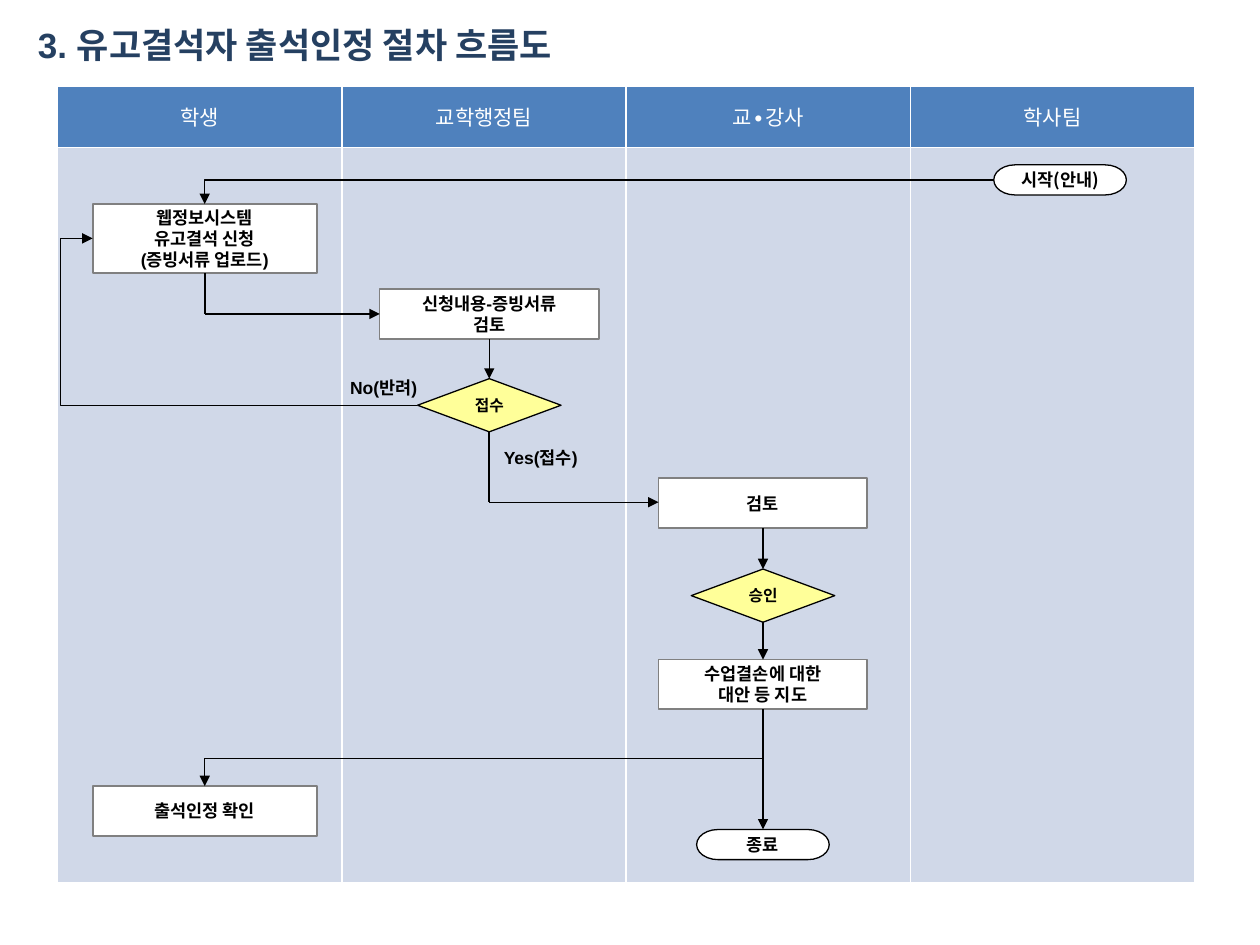
from dataclasses import dataclass

from lxml import etree
from pptx import Presentation
from pptx import util as u
from pptx.dml.color import RGBColor
from pptx.enum import shapes, text
from pptx.oxml.ns import qn

Pt = u.Pt
SHAPE = shapes.MSO_SHAPE
LINK = shapes.MSO_CONNECTOR
CENTER, LEFT = text.PP_ALIGN.CENTER, text.PP_ALIGN.LEFT


@dataclass(frozen=True)
class Theme:
    latin: str = "Arial"
    korean: str = "Noto Sans CJK KR"
    title: str = "254061"
    header: str = "4F81BD"
    lane: str = "D0D8E8"
    decision: str = "FFFF99"
    white: str = "FFFFFF"
    black: str = "000000"
    gray: str = "808080"
    title_size: float = 20
    header_size: float = 12
    body_size: float = 10
    small_size: float = 9


def rgb(value):
    return RGBColor.from_string(value)


class FlowSlide:
    def __init__(self, prs, theme):
        self.t = theme
        self.s = prs.slides.add_slide(prs.slide_layouts[5])

    def set_text(self, tf, lines, size, color=None, font=None, bold=True, align=CENTER):
        for i, line in enumerate(lines.split("\n")):
            p = tf.paragraphs[0] if i == 0 else tf.add_paragraph()
            p.text, p.alignment = line, align
            p.font.name, p.font.size, p.font.bold = font or self.t.latin, Pt(size), bold
            p.font.color.rgb = rgb(color or self.t.black)

    def title(self, words, x, y, w, h):
        sp = self.s.shapes.title
        sp.left, sp.top, sp.width, sp.height = Pt(x), Pt(y), Pt(w), Pt(h)
        tf = sp.text_frame
        tf.auto_size = text.MSO_AUTO_SIZE.NONE
        tf.vertical_anchor = text.MSO_ANCHOR.TOP
        self.set_text(tf, words, self.t.title_size, self.t.title, align=LEFT)

    def border(self, cell):
        tcPr = cell._tc.get_or_add_tcPr()
        for i, side in enumerate(("lnL", "lnR", "lnT", "lnB")):
            ln = etree.Element(qn(f"a:{side}"), w=str(Pt(1)))
            fill = etree.SubElement(ln, qn("a:solidFill"))
            etree.SubElement(fill, qn("a:srgbClr"), val=self.t.white)
            tcPr.insert(i, ln)

    def lanes(self, names, x, y, w, heights):
        table = self.s.shapes.add_table(
            2, len(names), Pt(x), Pt(y), Pt(w), Pt(sum(heights))).table
        for row, h in zip(table.rows, heights):
            row.height = Pt(h)
        for col, name in enumerate(names):
            for row, color in enumerate((self.t.header, self.t.lane)):
                cell = table.cell(row, col)
                cell.fill.solid()
                cell.fill.fore_color.rgb = rgb(color)
                self.border(cell)
            head = table.cell(0, col)
            head.vertical_anchor = text.MSO_ANCHOR.MIDDLE
            self.set_text(head.text_frame, name, self.t.header_size, self.t.white,
                          self.t.korean, bold=False)

    def node(self, kind, words, cx, y, w, h, fill, line, weight, size, font=None):
        sp = self.s.shapes.add_shape(kind, Pt(cx - w / 2), Pt(y), Pt(w), Pt(h))
        sp.shadow.inherit = False
        sp.fill.solid()
        sp.fill.fore_color.rgb = rgb(fill)
        sp.line.color.rgb = rgb(line)
        sp.line.width = Pt(weight)
        tf = sp.text_frame
        tf.vertical_anchor = text.MSO_ANCHOR.MIDDLE
        tf.margin_left = tf.margin_right = tf.margin_top = tf.margin_bottom = 0
        self.set_text(tf, words, size, font=font)

    def step(self, words, cx, y, w, h=28.4):
        self.node(SHAPE.RECTANGLE, words, cx, y, w, h, self.t.white, self.t.gray, 1,
                  self.t.body_size)

    def decision(self, words, cx, y):
        self.node(SHAPE.FLOWCHART_DECISION, words, cx, y, 82, 30.4, self.t.decision,
                  self.t.black, 0.75, self.t.small_size)

    def terminator(self, words, cx, y):
        self.node(SHAPE.FLOWCHART_TERMINATOR, words, cx, y, 75.8, 17.2, self.t.white,
                  self.t.black, 0.75, self.t.body_size, self.t.korean)

    def label(self, words, x, y, w):
        tf = self.s.shapes.add_textbox(Pt(x), Pt(y), Pt(w), Pt(19.4)).text_frame
        tf.word_wrap = True
        self.set_text(tf, words, self.t.body_size, align=LEFT)

    def link(self, x1, y1, x2, y2, kind=LINK.STRAIGHT, weight=0.75, arrow=True):
        cx = self.s.shapes.add_connector(kind, Pt(x1), Pt(y1), Pt(x2), Pt(y2))
        cx.line.color.rgb = rgb(self.t.black)
        cx.line.width = Pt(weight)
        spPr = cx._element.spPr
        if arrow:
            etree.SubElement(spPr.find(qn("a:ln")), qn("a:tailEnd"), type="triangle")
        etree.SubElement(spPr, qn("a:effectLst"))
        return spPr

    def corner(self, x1, y1, x2, y2):
        """One bend: across, then down."""
        spPr = self.link(x1, y1, x2, y2, LINK.ELBOW)
        spPr.find(qn("a:prstGeom")).set("prst", "bentConnector2")

    def elbow(self, x1, y1, x2, y2, bend, down=False):
        """Two bends; with down, it leaves downwards and ends lower left."""
        if down:
            cx, cy, w, h = (x1 + x2) / 2, (y1 + y2) / 2, y2 - y1, x1 - x2
            x1, y1, x2, y2 = cx - w / 2, cy - h / 2, cx + w / 2, cy + h / 2
        spPr = self.link(x1, y1, x2, y2, LINK.ELBOW)
        if down:
            spPr.find(qn("a:xfrm")).set("rot", "5400000")
        guides = spPr.find(qn("a:prstGeom")).get_or_add_avLst()
        etree.SubElement(guides, qn("a:gd"), name="adj1", fmla=f"val {round(bend * 100000)}")


def main():
    prs = Presentation()
    prs.slide_width, prs.slide_height = Pt(720), Pt(540)
    f = FlowSlide(prs, Theme())

    # Title and lanes
    f.title("3. 유고결석자 출석인정 절차 흐름도", 14.4, 10, 357, 28)
    f.lanes(("학생", "교학행정팀", "교∙강사", "학사팀"), 33, 49, 649.6, (35.4, 420.3))

    # Centre line of each lane's steps
    student, office, teacher, affairs = 117, 279.6, 436, 605.8

    # Steps, decisions and ends
    f.terminator("시작(안내)", affairs, 94.2)
    f.step("웹정보시스템\n유고결석 신청\n(증빙서류 업로드)", student, 116.6, 128, 39.4)
    f.step("신청내용-증빙서류\n검토", office, 165.2, 125.4)
    f.decision("접수", office, 216.4)
    f.step("검토", teacher, 273.3, 119.4)
    f.decision("승인", teacher, 325.2)
    f.step("수업결손에 대한\n대안 등 지도", teacher, 376.9, 119.4)
    f.step("출석인정 확인", student, 449.2, 128)
    f.terminator("종료", teacher, 474)

    # Application and review
    f.corner(568, 102.8, student, 116.6)
    f.link(student, 156, student, 179.4, weight=1, arrow=False)
    f.link(student, 179.4, 217, 179.4)
    f.link(office, 193.6, office, 216.4)

    # Outcomes of the first decision
    f.elbow(238.6, 231.6, 53, 136.3, 1.1)
    f.link(office, 246.8, office, 287, weight=1, arrow=False)
    f.link(office, 287, 376.3, 287)
    f.label("No(반려)", 193, 211.7, 54)
    f.label("Yes(접수)", 280.8, 252, 57)

    # Approval to the end
    for top, bottom in ((301.7, 325.2), (355.6, 376.9), (405.3, 474)):
        f.link(teacher, top, teacher, bottom)
    f.elbow(teacher, 426.2, student, 449.2, 0.32, down=True)

    prs.save("out.pptx")


if __name__ == "__main__":
    main()
